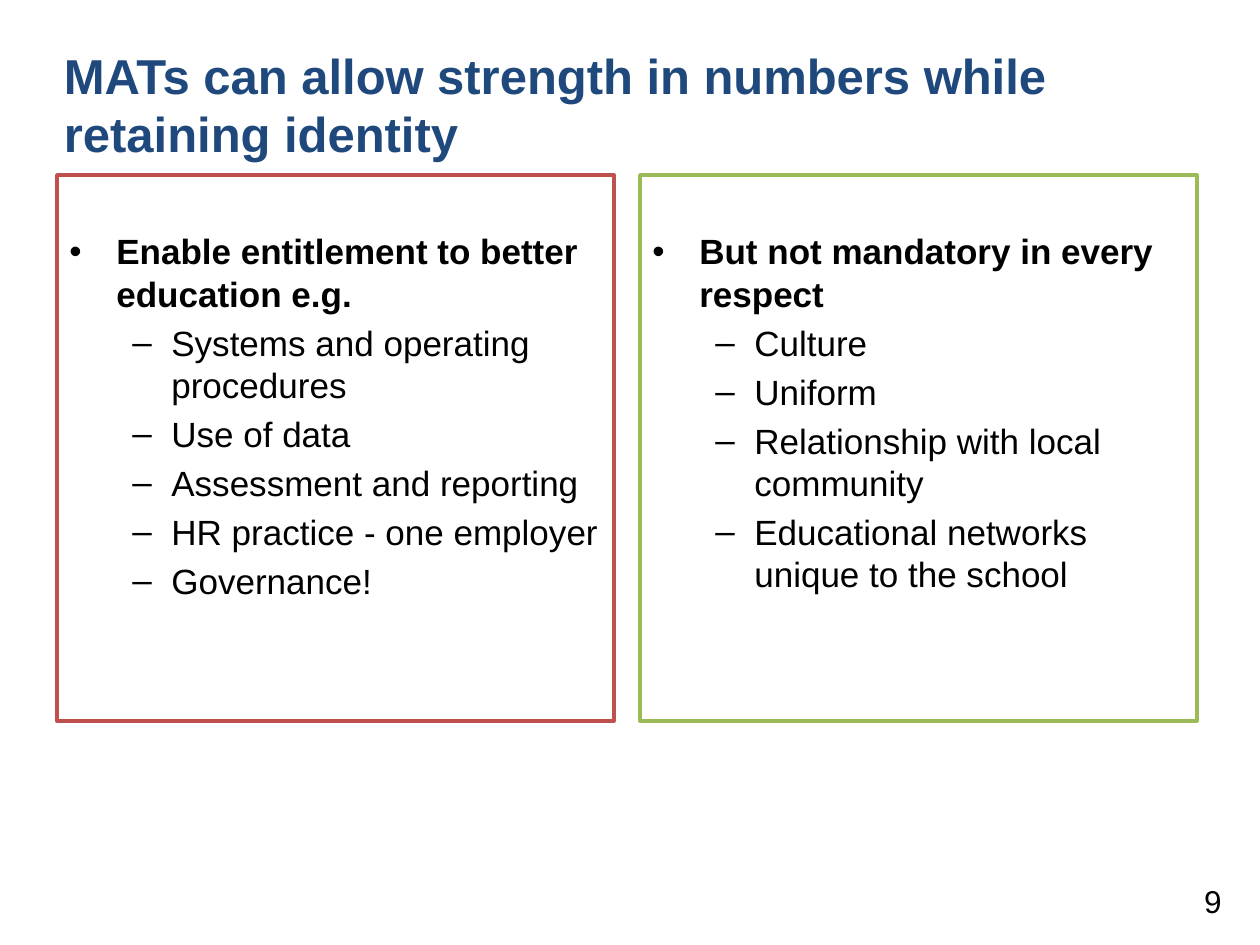
import pptx
import pptx.dml.color
import pptx.enum.shapes
import pptx.enum.text
import pptx.oxml.ns
import pptx.util
from lxml import etree

PX = 914400 // 126

THEME = {
    "font": "Arial",
    "title": "1F497D", "text": "000000", "panel": "FFFFFF",
    "red": "C0504D", "green": "9BBB59",
    "title_size": 28, "body_size": 20, "number_size": 18,
}

# bullet, left indent and hanging indent in px, by outline level
LEVELS = [
    {"char": "•", "left": 47, "hang": 47, "bold": True},
    {"char": "–", "left": 102, "hang": 39, "bold": False},
]


def add_run(p, text, size, color, bold=False):
    r = p.add_run()
    r.text = text
    font = {"name": THEME["font"], "size": pptx.util.Pt(THEME[size]), "bold": bold}
    for name, value in font.items():
        setattr(r.font, name, value)
    r.font.color.rgb = pptx.dml.color.RGBColor.from_string(THEME[color])


def set_bullet(p, level):
    """Give the paragraph the bullet and hanging indent of its outline level."""
    p.level = level
    style = LEVELS[level]
    pPr = p._p.get_or_add_pPr()
    pPr.set("marL", str(style["left"] * PX))
    pPr.set("indent", str(-style["hang"] * PX))
    for tag, key, value in [("a:buFont", "typeface", THEME["font"]),
                            ("a:buChar", "char", style["char"])]:
        etree.SubElement(pPr, pptx.oxml.ns.qn(tag)).set(key, value)


prs = pptx.Presentation()
prs.slide_width = pptx.util.Inches(10)
prs.slide_height = pptx.util.Inches(7.5)
s = prs.slides.add_slide(prs.slide_layouts[6])

# Title
tf = s.shapes.add_textbox(64 * PX, 45 * PX, 1134 * PX, 118 * PX).text_frame
title_format = {
    "word_wrap": True,
    "margin_left": 0, "margin_right": 0, "margin_top": 0, "margin_bottom": 0,
}
for name, value in title_format.items():
    setattr(tf, name, value)
add_run(tf.paragraphs[0],
        "MATs can allow strength in numbers while retaining identity",
        "title_size", "title", bold=True)

# Slide number
tf = s.shapes.add_textbox(940 * PX, 876 * PX, 294 * PX, 50 * PX).text_frame
tf.word_wrap = True
p = tf.paragraphs[0]
p.alignment = pptx.enum.text.PP_ALIGN.RIGHT
add_run(p, "9", "number_size", "text")

# Two panels side by side
panels = [
    ("red", "Enable entitlement to better education e.g.",
     ["Systems and operating procedures", "Use of data",
      "Assessment and reporting", "HR practice - one employer", "Governance!"]),
    ("green", "But not mandatory in every respect",
     ["Culture", "Uniform", "Relationship with local community",
      "Educational networks unique to the school"]),
]
panel_format = {
    "word_wrap": True,
    "vertical_anchor": pptx.enum.text.MSO_ANCHOR.TOP,
    "margin_top": 55 * PX,
}
left, step = 57, 583
for i, (color, heading, points) in enumerate(panels):
    sp = s.shapes.add_shape(pptx.enum.shapes.MSO_SHAPE.RECTANGLE,
                            (left + i * step) * PX, 175 * PX, 557 * PX, 546 * PX)
    sp.shadow.inherit = False
    sp.fill.solid()
    sp.fill.fore_color.rgb = pptx.dml.color.RGBColor.from_string(THEME["panel"])
    sp.line.color.rgb = pptx.dml.color.RGBColor.from_string(THEME[color])
    sp.line.width = pptx.util.Pt(2)
    tf = sp.text_frame
    for name, value in panel_format.items():
        setattr(tf, name, value)
    for j, text in enumerate([heading] + points):
        p = tf.paragraphs[0] if j == 0 else tf.add_paragraph()
        level = min(j, 1)
        set_bullet(p, level)
        p.alignment = pptx.enum.text.PP_ALIGN.LEFT
        if j:
            p.space_before = pptx.util.Pt(4)
        add_run(p, text, "body_size", "text", LEVELS[level]["bold"])

prs.save("out.pptx")
